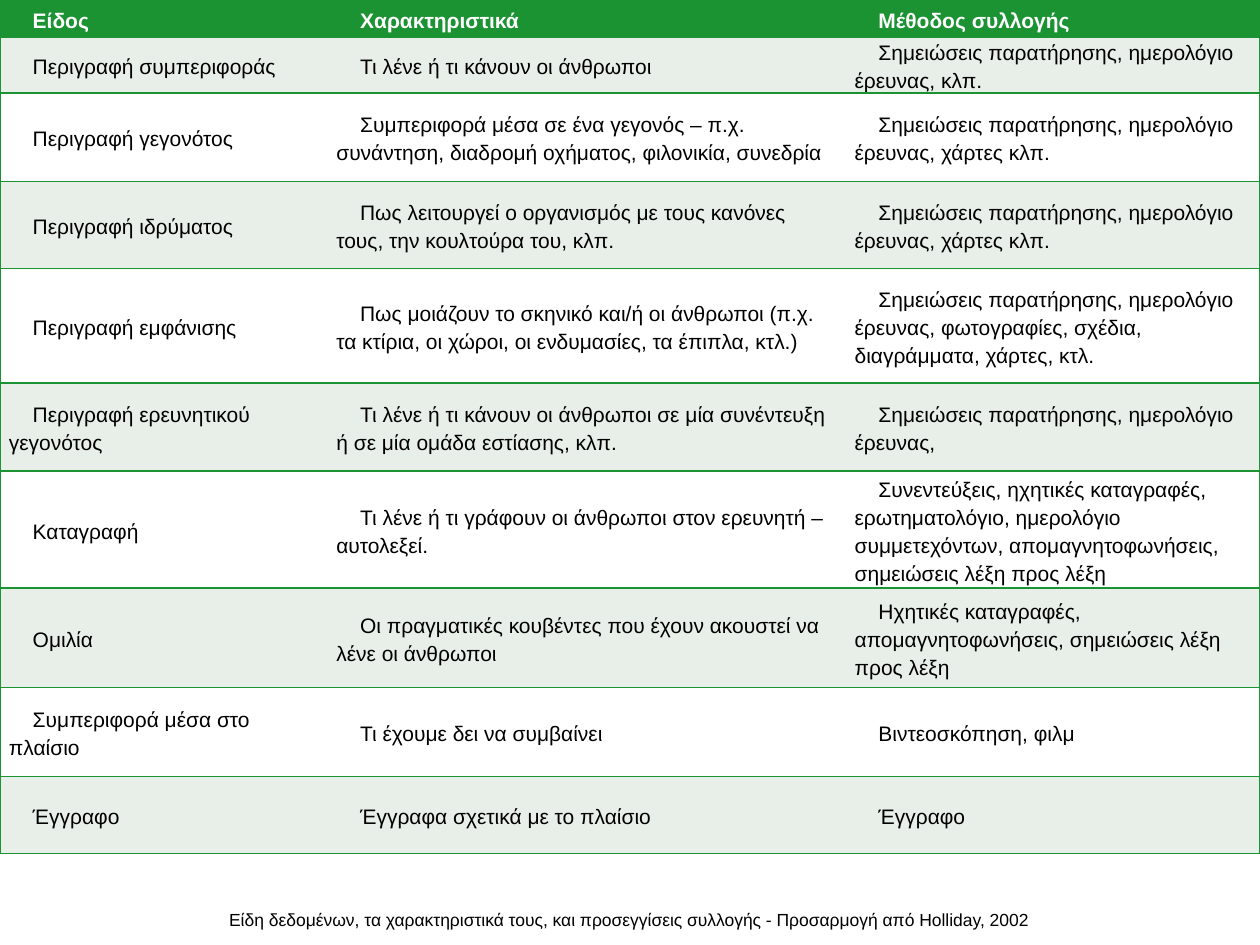
import lxml.etree
import pptx
import pptx.dml.color
import pptx.enum.text
import pptx.oxml.ns
import pptx.util

Cm = pptx.util.Cm
Pt = pptx.util.Pt
ANCHOR = pptx.enum.text.MSO_ANCHOR

COLOURS = {
    "green": "1B9332",
    "band": "E8EEE8",
    "white": "FFFFFF",
    "black": "000000",
}

COLUMN_WIDTHS = [6.6, 10.45, 8.35]
ROW_HEIGHTS = [0.75, 1.08, 1.78, 1.75, 2.31, 1.78, 2.35, 2.01, 1.8, 1.55]

ROWS = [
    ("Είδος", "Χαρακτηριστικά", "Μέθοδος συλλογής"),
    (
        "Περιγραφή συμπεριφοράς",
        "Τι λένε ή τι κάνουν οι άνθρωποι",
        "Σημειώσεις παρατήρησης, ημερολόγιο έρευνας, κλπ.",
    ),
    (
        "Περιγραφή γεγονότος",
        "Συμπεριφορά μέσα σε ένα γεγονός – π.χ. συνάντηση, διαδρομή οχήματος, φιλονικία, συνεδρία",
        "Σημειώσεις παρατήρησης, ημερολόγιο έρευνας, χάρτες κλπ.",
    ),
    (
        "Περιγραφή ιδρύματος",
        "Πως λειτουργεί ο οργανισμός με τους κανόνες τους, την κουλτούρα του, κλπ.",
        "Σημειώσεις παρατήρησης, ημερολόγιο έρευνας, χάρτες κλπ.",
    ),
    (
        "Περιγραφή εμφάνισης",
        "Πως μοιάζουν το σκηνικό και/ή οι άνθρωποι (π.χ. τα κτίρια, οι χώροι, οι ενδυμασίες, τα έπιπλα, κτλ.)",
        "Σημειώσεις παρατήρησης, ημερολόγιο έρευνας, φωτογραφίες, σχέδια, διαγράμματα, χάρτες, κτλ.",
    ),
    (
        "Περιγραφή ερευνητικού γεγονότος",
        "Τι λένε ή τι κάνουν οι άνθρωποι σε μία συνέντευξη ή σε μία ομάδα εστίασης, κλπ.",
        "Σημειώσεις παρατήρησης, ημερολόγιο έρευνας,",
    ),
    (
        "Καταγραφή",
        "Τι λένε ή τι γράφουν οι άνθρωποι στον ερευνητή – αυτολεξεί.",
        "Συνεντεύξεις, ηχητικές καταγραφές, ερωτηματολόγιο, ημερολόγιο συμμετεχόντων, απομαγνητοφωνήσεις, σημειώσεις λέξη προς λέξη",
    ),
    (
        "Ομιλία",
        "Οι πραγματικές κουβέντες που έχουν ακουστεί να λένε οι άνθρωποι",
        "Ηχητικές καταγραφές, απομαγνητοφωνήσεις, σημειώσεις λέξη προς λέξη",
    ),
    ("Συμπεριφορά μέσα στο πλαίσιο", "Τι έχουμε δει να συμβαίνει", "Βιντεοσκόπηση, φιλμ"),
    ("Έγγραφο", "Έγγραφα σχετικά με το πλαίσιο", "Έγγραφο"),
]

CAPTION = "Είδη δεδομένων, τα χαρακτηριστικά τους, και προσεγγίσεις συλλογής - Προσαρμογή από Holliday, 2002"


def apply_format(target, values):
    for name, value in values.items():
        setattr(target, name, value)


def rgb(colour):
    return pptx.dml.color.RGBColor.from_string(COLOURS[colour])


class SlideBuilder:
    font_name = "Arial"
    cell_format = {
        "vertical_anchor": ANCHOR.MIDDLE,
        "margin_left": Cm(0.18),
        "margin_right": Cm(0.18),
        "margin_top": 0,
        "margin_bottom": 0,
    }
    cell_paragraph_format = {"line_spacing": Pt(16), "space_after": Pt(6)}
    caption_format = {
        "word_wrap": True,
        "vertical_anchor": ANCHOR.BOTTOM,
        "margin_left": Cm(0.25),
        "margin_right": Cm(0.25),
        "margin_top": Cm(0.25),
        "margin_bottom": Cm(0.25),
    }

    def __init__(self, presentation):
        self.slide = presentation.slides.add_slide(presentation.slide_layouts[6])

    def add_text(self, paragraph, text, size, colour, bold=False):
        run = paragraph.add_run()
        run.text = text
        apply_format(run.font, {"name": self.font_name, "size": Pt(size), "bold": bold})
        run.font.color.rgb = rgb(colour)

    def border(self, cell, side, colour=None):
        qn = pptx.oxml.ns.qn
        properties = cell._tc.get_or_add_tcPr()
        line = lxml.etree.SubElement(properties, qn(f"a:ln{side}"), w=str(Pt(1)))
        if colour is None:
            lxml.etree.SubElement(line, qn("a:noFill"))
        else:
            fill = lxml.etree.SubElement(line, qn("a:solidFill"))
            lxml.etree.SubElement(fill, qn("a:srgbClr"), val=COLOURS[colour])

    def cell(self, cell, text, fill, colour, bold, outer_sides):
        apply_format(cell, self.cell_format)
        for side in "LRTB":
            self.border(cell, side, "green" if side in outer_sides else None)
        cell.fill.solid()
        cell.fill.fore_color.rgb = rgb(fill)
        paragraph = cell.text_frame.paragraphs[0]
        apply_format(paragraph, self.cell_paragraph_format)
        paragraph._p.get_or_add_pPr().set("indent", str(Cm(0.48)))
        self.add_text(paragraph, text, 12, colour, bold)

    def table(self, rows, column_widths, row_heights):
        table = self.slide.shapes.add_table(
            len(rows), len(column_widths), 0, 0, Cm(sum(column_widths)), Cm(sum(row_heights))
        ).table
        table.horz_banding = False
        for column, width in zip(table.columns, column_widths):
            column.width = Cm(width)
        last = len(column_widths) - 1
        for row_index, (texts, height) in enumerate(zip(rows, row_heights)):
            table.rows[row_index].height = Cm(height)
            header = row_index == 0
            fill = "green" if header else ("white", "band")[row_index % 2]
            for column_index, text in enumerate(texts):
                sides = "TB" + {0: "L", last: "R"}.get(column_index, "")
                self.cell(
                    table.cell(row_index, column_index),
                    text,
                    fill,
                    "white" if header else "black",
                    header,
                    sides,
                )

    def caption(self, text, left, top, width, height):
        shape = self.slide.shapes.add_textbox(Cm(left), Cm(top), Cm(width), Cm(height))
        apply_format(shape.text_frame, self.caption_format)
        self.add_text(shape.text_frame.paragraphs[0], text, 10, "black")


def main():
    presentation = pptx.Presentation()
    apply_format(presentation, {"slide_width": Cm(25.4), "slide_height": Cm(19.05)})
    builder = SlideBuilder(presentation)
    builder.table(ROWS, COLUMN_WIDTHS, ROW_HEIGHTS)
    builder.caption(CAPTION, 4.37, 17.5, 20.68, 1.47)
    presentation.save("out.pptx")


if __name__ == "__main__":
    main()
